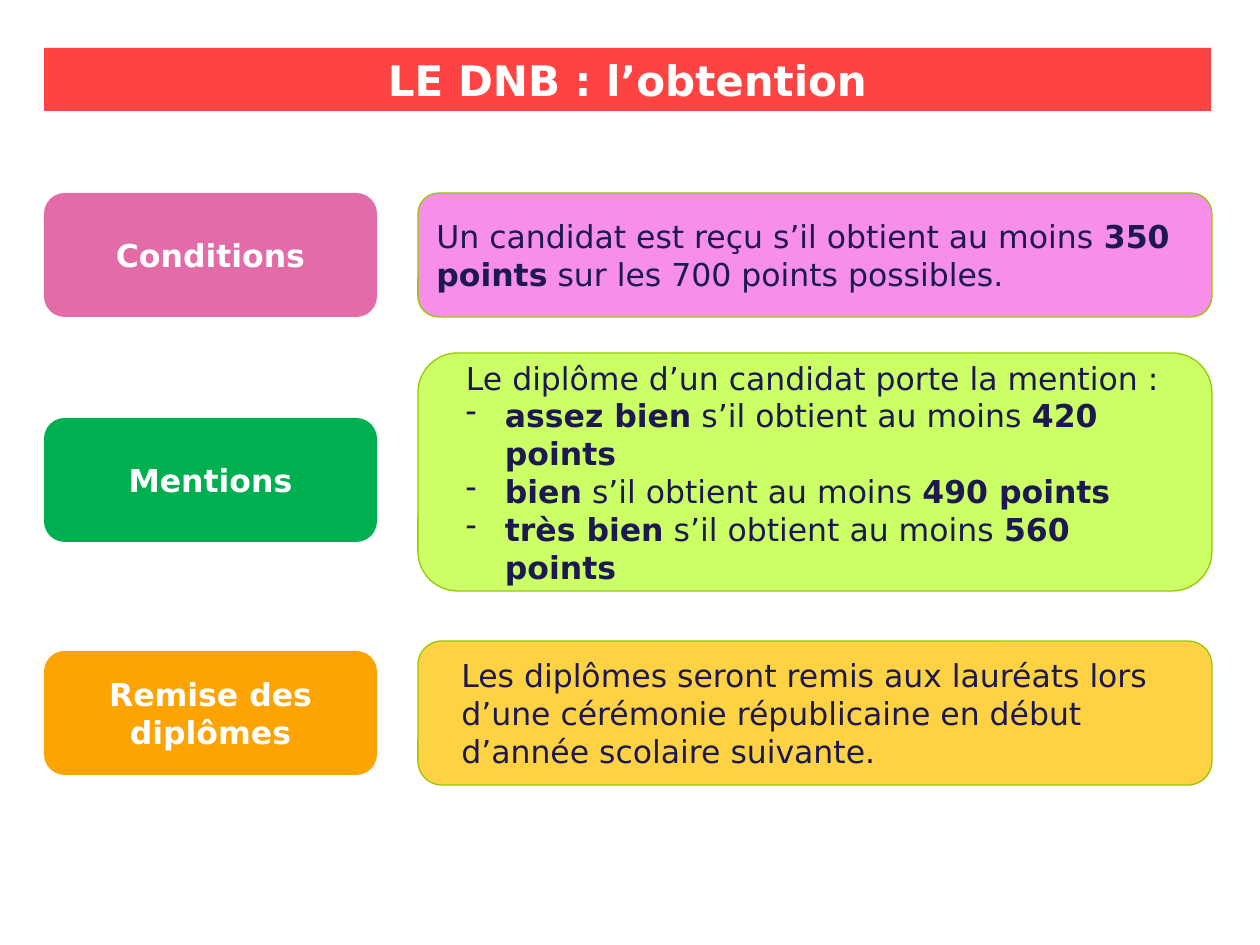
from lxml import etree
from pptx import Presentation, util as u
from pptx.dml.color import RGBColor
from pptx.enum import shapes, text
from pptx.oxml.ns import qn

PX = 914400 / 126
FONT = "DejaVu Sans"
WHITE = RGBColor(0xFF, 0xFF, 0xFF)
NAVY = RGBColor(0x1C, 0x18, 0x50)
RED = RGBColor(0xFF, 0x43, 0x43)
PINK = RGBColor(0xE3, 0x6B, 0xA7)
LIGHT_PINK = RGBColor(0xF6, 0x8E, 0xEA)
GREEN = RGBColor(0x00, 0xB0, 0x50)
LIME = RGBColor(0xCC, 0xFF, 0x66)
ORANGE = RGBColor(0xFD, 0xA4, 0x03)
YELLOW = RGBColor(0xFF, 0xD2, 0x43)
OUTLINE = RGBColor(0x96, 0xC8, 0x00)

LEFT, LABEL_W, LABEL_H = 44, 333, 124
BOX_LEFT, BOX_W = 418, 794
INDENT, BULLET_MARGIN, BULLET_HANG = 24, 63, 39


def px(n):
    return u.Emu(round(n * PX))


def add_box(kind, left, top, width, height, fill, line=None):
    s = slide.shapes.add_shape(kind, px(left), px(top), px(width), px(height))
    s.shadow.inherit = False
    s.fill.solid()
    s.fill.fore_color.rgb = fill
    if line is None:
        s.line.fill.background()
    else:
        s.line.color.rgb = line
        s.line.width = u.Pt(0.75)
    tf = s.text_frame
    tf.word_wrap = True
    tf.vertical_anchor = text.MSO_ANCHOR.MIDDLE
    return tf


def add_run(p, words, size, color, bold):
    r = p.add_run()
    r.text = words
    r.font.name = FONT
    r.font.size = u.Pt(size)
    r.font.bold = bold
    r.font.color.rgb = color


prs = Presentation()
prs.slide_width, prs.slide_height = u.Inches(10), u.Inches(7.5)
slide = prs.slides.add_slide(prs.slide_layouts[6])

# Title banner
tf = add_box(shapes.MSO_SHAPE.RECTANGLE, LEFT, 48, 1167, 63, RED)
tf.vertical_anchor = text.MSO_ANCHOR.TOP
tf.auto_size = text.MSO_AUTO_SIZE.SHAPE_TO_FIT_TEXT
p = tf.paragraphs[0]
p.alignment = text.PP_ALIGN.CENTER
add_run(p, "LE DNB : l’obtention", 24, WHITE, True)

# Labels: wording, top, fill
labels = [
    ("Conditions", 193, PINK),
    ("Mentions", 418, GREEN),
    ("Remise des diplômes", 651, ORANGE),
]
for words, top, fill in labels:
    tf = add_box(shapes.MSO_SHAPE.ROUNDED_RECTANGLE, LEFT, top, LABEL_W, LABEL_H, fill)
    p = tf.paragraphs[0]
    p.alignment = text.PP_ALIGN.CENTER
    add_run(p, words, 18, WHITE, True)

# Details: top, height, fill, paragraphs of (margin, bulleted, runs of (wording, bold))
mentions = [("assez bien", "420 points"), ("bien", "490 points"), ("très bien", "560 points")]
details = [
    (193, 124, LIGHT_PINK, [
        (0, False, [("Un candidat est reçu s’il obtient au moins ", False),
                    ("350 points", True),
                    (" sur les 700 points possibles.", False)]),
    ]),
    (353, 238, LIME, [
        (INDENT, False, [("Le diplôme d’un candidat porte la mention :", False)]),
        *[(BULLET_MARGIN, True, [(mention, True),
                                 (" s’il obtient au moins ", False),
                                 (points, True)])
          for mention, points in mentions],
    ]),
    (641, 144, YELLOW, [
        (INDENT, False, [("Les diplômes seront remis aux lauréats lors d’une cérémonie "
                          "républicaine en début d’année scolaire suivante.", False)]),
    ]),
]
for top, height, fill, paragraphs in details:
    tf = add_box(shapes.MSO_SHAPE.ROUNDED_RECTANGLE, BOX_LEFT, top, BOX_W, height, fill, OUTLINE)
    for i, (margin, bulleted, runs) in enumerate(paragraphs):
        p = tf.add_paragraph() if i else tf.paragraphs[0]
        p.alignment = text.PP_ALIGN.LEFT
        pPr = p._p.get_or_add_pPr()
        pPr.set("marL", str(px(margin)))
        if bulleted:
            pPr.set("indent", str(px(-BULLET_HANG)))
            etree.SubElement(pPr, qn("a:buChar"), char="-")
        for words, bold in runs:
            add_run(p, words, 18, NAVY, bold)

prs.save("out.pptx")
